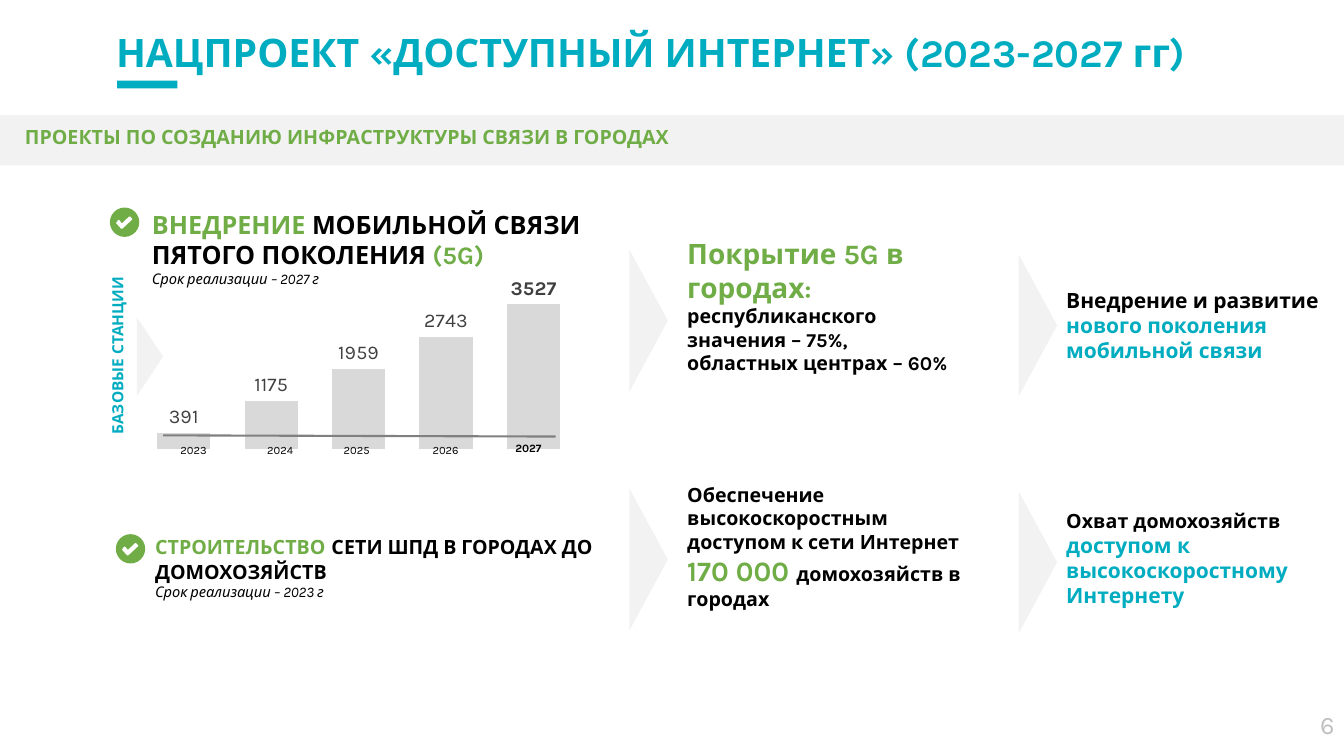
import pptx
import pptx.util
import pptx.dml.color
import pptx.chart.data
import pptx.enum.chart
import pptx.enum.shapes
import pptx.enum.text
import pptx.oxml
from dataclasses import dataclass
from pptx.util import Cm


@dataclass(frozen=True)
class Theme:
    """Colours, faces and type sizes of the slide."""
    teal: str = "00ACC0"
    green: str = "70AD47"
    black: str = "000000"
    white: str = "FFFFFF"
    pale: str = "F2F2F2"
    bar: str = "D9D9D9"
    axis: str = "808080"
    dark: str = "404040"
    page: str = "BFBFBF"
    face: str = "Karla"
    plain: str = "Calibri"
    title: int = 28
    big: int = 20
    head: int = 18
    goal: int = 15
    body: int = 14
    side: int = 11
    note: float = 10.5
    year: int = 8


T = Theme()
KIND = pptx.enum.shapes.MSO_SHAPE
ALIGN = pptx.enum.text.PP_ALIGN


def rgb(code):
    """Turn a hex code into a colour."""
    return pptx.dml.color.RGBColor.from_string(code)


def run(text, size, color=T.black, bold=True, italic=False, face=T.face):
    """Describe one run of text."""
    look = dict(size=pptx.util.Pt(size), color=color, bold=bold, italic=italic, name=face)
    return text, look


def style(font, look):
    """Apply a set of font traits."""
    for key, value in look.items():
        if key == "color":
            font.color.rgb = rgb(value)
        else:
            setattr(font, key, value)


def write(frame, paras, align=ALIGN.LEFT):
    """Fill a frame, setting shared traits on the paragraph."""
    frame.word_wrap = True
    for i, runs in enumerate(paras):
        para = frame.paragraphs[0] if i == 0 else frame.add_paragraph()
        para.alignment = align
        first = runs[0][1]
        same = {k: v for k, v in first.items() if all(r[1][k] == v for r in runs)}
        style(para.font, same)
        for text, look in runs:
            part = para.add_run()
            part.text = text
            style(part.font, {k: v for k, v in look.items() if k not in same})


def label(slide, box, paras, align=ALIGN.LEFT):
    """Add a text box."""
    shape = slide.shapes.add_textbox(*map(Cm, box))
    write(shape.text_frame, paras, align)
    return shape


def paint(shape, color):
    """Give a shape a flat fill."""
    shape.shadow.inherit = False
    shape.fill.solid()
    shape.fill.fore_color.rgb = rgb(color)
    shape.line.fill.background()


def block(shapes, kind, box, color):
    """Add a flat preset shape."""
    shape = shapes.add_shape(kind, *map(Cm, box))
    paint(shape, color)
    return shape


def arrow(slide, box):
    """Add a triangle that points right and fills the box."""
    x, y, w, h = box
    flat = (x + (w - h) / 2, y + (h - w) / 2, h, w)
    block(slide.shapes, KIND.ISOSCELES_TRIANGLE, flat, T.pale).rotation = 90


def check(slide, x, y, size=0.74):
    """Add a tick in a round badge."""
    group = slide.shapes.add_group_shape()
    block(group.shapes, KIND.OVAL, (x, y, size, size), T.green)
    tick = [(0.76, 0.41), (0.47, 0.68), (0.43, 0.72), (0.38, 0.72), (0.21, 0.53), (0.27, 0.44),
            (0.31, 0.42), (0.41, 0.54), (0.65, 0.31), (0.69, 0.31), (0.76, 0.38)]
    spots = [(Cm(x + size * a), Cm(y + size * b)) for a, b in tick]
    pen = group.shapes.build_freeform(*spots[0])
    pen.add_line_segments(spots[1:])
    paint(pen.convert_to_shape(), T.white)


def header(slide, box):
    """Place the title, its accent and the section band."""
    x, y, w, h = box
    title = slide.shapes.title
    title.left, title.top, title.width, title.height = map(Cm, (x + 2.67, y + 0.58, w - 3.67, 1.45))
    frame = title.text_frame
    frame.auto_size = pptx.enum.text.MSO_AUTO_SIZE.NONE
    frame.vertical_anchor = pptx.enum.text.MSO_ANCHOR.TOP
    write(frame, [[run("НАЦПРОЕКТ «ДОСТУПНЫЙ ИНТЕРНЕТ» (2023-2027 гг)", T.title, T.teal)]])
    block(slide.shapes, KIND.RECTANGLE, (x + 2.95, y + 2.03, 1.52, 0.2), T.teal)
    block(slide.shapes, KIND.RECTANGLE, (x, y + h - 1.27, w, 1.27), T.pale)
    text = "ПРОЕКТЫ ПО СОЗДАНИЮ ИНФРАСТРУКТУРЫ СВЯЗИ В ГОРОДАХ"
    label(slide, (x + 0.38, y + h - 1.15, w - 1.59, 0.86), [[run(text, T.body, T.green)]])


def topic(slide, box, mark, paras, pad=None):
    """Place a project heading with its badge at an offset."""
    x, y, w, h = box
    check(slide, x + mark[0], y + mark[1])
    frame = label(slide, box, paras).text_frame
    if pad is not None:
        frame.margin_left = frame.margin_right = frame.margin_top = frame.margin_bottom = Cm(pad)


def bars(slide, box):
    """Place the chart of base stations with its axis and captions."""
    x, y, w, h = box
    years = ["2023", "2024", "2025", "2026", "2027"]
    data = pptx.chart.data.CategoryChartData()
    data.categories = years
    data.add_series("Базовые станции", (391, 1175, 1959, 2743, 3527))
    kind = pptx.enum.chart.XL_CHART_TYPE.COLUMN_CLUSTERED
    chart = slide.shapes.add_chart(kind, *map(Cm, box), data).chart
    chart.has_legend = chart.has_title = False
    style(chart.font, run("", 10, bold=False, face=T.plain)[1])
    for axis in (chart.category_axis, chart.value_axis):
        axis.visible = axis.has_major_gridlines = False
    chart.value_axis.minimum_scale, chart.value_axis.maximum_scale = 0, 4000
    plot = chart.plots[0]
    plot.gap_width, plot.overlap, plot.vary_by_categories = 64, 15, False
    series = plot.series[0]
    series.format.fill.solid()
    series.format.fill.fore_color.rgb = rgb(T.bar)
    place = pptx.enum.chart.XL_LABEL_POSITION.OUTSIDE_END
    tags = series.data_labels
    tags.show_value = True
    last = series.points[len(years) - 1].data_label
    for tag, bold in ((tags, False), (last, True)):
        style(tag.font, run("", T.body, T.dark, bold)[1])
        tag.position = place
    area = chart._chartSpace.chart.plotArea
    for old in area.xpath("c:layout"):
        area.remove(old)
    sizes = "".join(f'<c:{k} val="{v}"/>' for k, v in
                    (("x", 0.02), ("y", 0.04), ("w", 0.96), ("h", 0.94)))
    area.insert(0, pptx.oxml.parse_xml(
        '<c:layout xmlns:c="http://schemas.openxmlformats.org/drawingml/2006/chart"><c:manualLayout>'
        '<c:layoutTarget val="inner"/><c:xMode val="edge"/><c:yMode val="edge"/>'
        f'{sizes}</c:manualLayout></c:layout>'))
    for year, mid in zip(years, (1.58, 3.76, 5.69, 7.93, 10.02)):
        final = year == years[-1]
        spot = (x + mid - 1.38, y + (4.01 if final else 4.06), 2.76, 0.61)
        label(slide, spot, [[run(year, T.year, bold=final)]], ALIGN.CENTER)
    ends = map(Cm, (x + 0.81, y + 3.98, x + 10.7, y + 4.01))
    line = slide.shapes.add_connector(pptx.enum.shapes.MSO_CONNECTOR.STRAIGHT, *ends)
    line.line.color.rgb = rgb(T.axis)
    line.line.width = pptx.util.Pt(1.5)
    line._element.spPr.append(pptx.oxml.parse_xml(
        '<a:effectLst xmlns:a="http://schemas.openxmlformats.org/drawingml/2006/main"/>'))
    side = label(slide, (x - 2.66, y + 1.6, 4.65, 0.74),
                 [[run("БАЗОВЫЕ СТАНЦИИ", T.side, T.teal)]], ALIGN.CENTER)
    side.rotation = 270
    arrow(slide, (x + 0.15, y + 1.01, 0.66, 1.98))


def result(slide, box, lead, paras):
    """Place a result text with the arrow leading to it."""
    x, y, w, h = box
    arrow(slide, (x + lead[0], y + lead[1], 0.97, 3.58))
    label(slide, box, paras)


def main():
    """Build the slide and save it."""
    deck = pptx.Presentation()
    deck.slide_width, deck.slide_height = Cm(33.87), Cm(19.05)
    slide = deck.slides.add_slide(deck.slide_layouts[5])
    header(slide, (0, 0, 33.87, 4.17))
    topic(slide, (3.73, 5.18, 12.7, 2.18), (-0.96, 0.05), [
        [run("ВНЕДРЕНИЕ", T.head, T.green), run(" МОБИЛЬНОЙ СВЯЗИ ПЯТОГО ПОКОЛЕНИЯ ", T.head),
         run("(5G)", T.head, T.green)],
        [run("Срок реализации – 2027 г", T.note, bold=False, italic=True)]], 0.1)
    bars(slide, (3.3, 6.99, 11.48, 4.42))
    topic(slide, (3.66, 13.21, 11.94, 2.67), (-0.74, 0.25), [
        [run("СТРОИТЕЛЬСТВО", T.body, T.green), run(" ", T.head, bold=False, face=T.plain),
         run("СЕТИ ШПД В ГОРОДАХ ДО ДОМОХОЗЯЙСТВ", T.body)],
        [run("Срок реализации – 2023 г", T.note, bold=False, italic=True)]])
    result(slide, (17.07, 5.84, 7.72, 2.59), (-1.21, 0.45), [
        [run("Покрытие 5G в городах", T.big, T.green), run(":", T.head, T.green)],
        [run("республиканского значения – 75%,", T.body)],
        [run("областных центрах – 60%", T.body)]])
    result(slide, (17.07, 12.04, 7.72, 2.59), (-1.21, 0.27), [
        [run("Обеспечение высокоскоростным доступом к сети Интернет ", T.body),
         run("170 000 ", T.big, T.green), run("домохозяйств в городах", T.body)]])
    result(slide, (26.62, 7.11, 7.42, 2.18), (-0.95, -0.7), [
        [run("Внедрение и развитие ", T.goal), run("нового поколения мобильной связи", T.goal, T.teal)]])
    result(slide, (26.62, 12.7, 6.93, 2.77), (-0.95, -0.32), [
        [run("Охват домохозяйств ", T.body),
         run("доступом к высокоскоростному Интернету", T.goal, T.teal)]])
    label(slide, (32.69, 17.75, 1.19, 1.02), [[run("6", T.head, T.page, False)]], ALIGN.RIGHT)
    deck.save("out.pptx")


if __name__ == "__main__":
    main()
